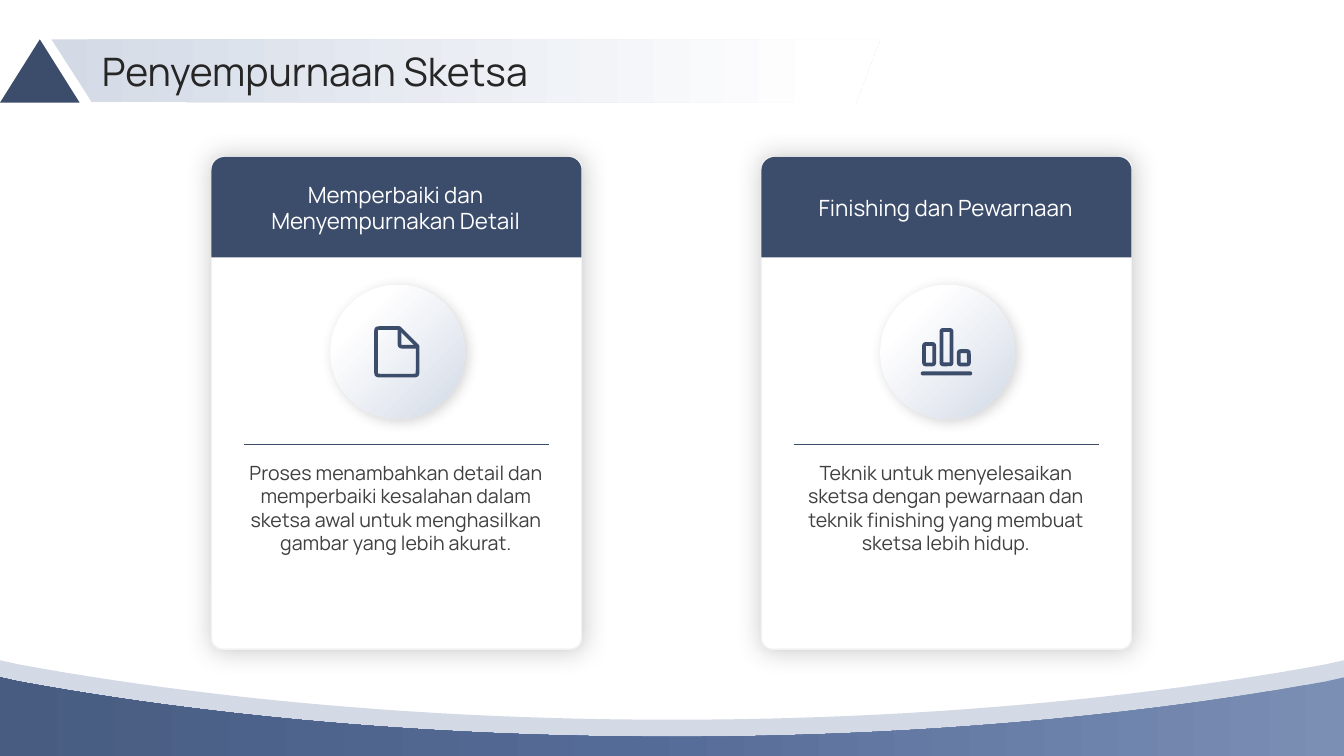
from dataclasses import dataclass

from lxml.etree import SubElement
from pptx import Presentation
from pptx.dml.color import RGBColor
from pptx.enum.shapes import MSO_CONNECTOR as Connector, MSO_SHAPE as Preset
from pptx.enum.text import MSO_ANCHOR as Anchor, PP_ALIGN as Align
from pptx.oxml.ns import qn
from pptx.util import Pt


@dataclass(frozen=True)
class Theme:
    font: str = "Manrope"
    navy: str = "3C4C6B"
    mist: str = "D3DAE6"
    white: str = "FFFFFF"
    edge: str = "F2F2F2"
    ink: str = "262626"
    gray: str = "404040"
    wave: tuple = ((0, "7B8FB5"), (53, "556B97"), (100, "485C81"))
    title: int = 28
    heading: int = 16
    body: int = 14


THEME = Theme()
WIDTH, HEIGHT = 960, 540


# Formatting
def paint(shape, fill=None, line=None, weight=1):
    """Fill with a colour, or leave open; outline only if a colour is given."""
    shape.shadow.inherit = False
    if fill:
        shape.fill.solid()
        shape.fill.fore_color.rgb = RGBColor.from_string(fill)
    else:
        shape.fill.background()
    if line:
        shape.line.color.rgb = RGBColor.from_string(line)
        shape.line.width = Pt(weight)
    else:
        shape.line.fill.background()
    return shape


def add_color(parent, color):
    return SubElement(parent, qn("a:srgbClr"), val=color)


def shade(shape, stops, angle):
    """Linear gradient; the angle runs clockwise."""
    shape.fill.gradient()
    shape.fill.gradient_angle = -angle % 360
    stop_list = shape._element.spPr.find(".//" + qn("a:gsLst"))
    for old in list(stop_list):
        stop_list.remove(old)
    for position, color in stops:
        add_color(SubElement(stop_list, qn("a:gs"), pos=str(position * 1000)), color)


def cast_shadow(shape, alpha, blur, distance, angle):
    effects = shape._element.spPr.find(qn("a:effectLst"))
    shadow = SubElement(effects, qn("a:outerShdw"), blurRad=str(Pt(blur)),
                        dist=str(Pt(distance)), dir=str(angle * 60000),
                        algn="ctr", rotWithShape="0")
    SubElement(add_color(shadow, THEME.gray), qn("a:alpha"), val=str(alpha * 1000))


# Elements
def add_preset(page, preset, left, top, width, height, adjust=None, **look):
    shape = page.shapes.add_shape(preset, Pt(left), Pt(top), Pt(width), Pt(height))
    if adjust is not None:
        shape.adjustments[0] = adjust
    return paint(shape, **look)


def bezier(start, control1, control2, end, steps=24):
    """Points along a cubic curve, both ends included."""
    def at(t):
        weights = ((1 - t) ** 3, 3 * t * (1 - t) ** 2, 3 * t * t * (1 - t), t ** 3)
        corners = (start, control1, control2, end)
        return tuple(sum(w * c[axis] for w, c in zip(weights, corners))
                     for axis in (0, 1))
    return [at(step / steps) for step in range(steps + 1)]


def bend(start, corner, end):
    return bezier(start, corner, corner, end, 8)


def add_outline(page, points, left=0, top=0, close=True, **look):
    first, *rest = [(Pt(left + x), Pt(top + y)) for x, y in points]
    builder = page.shapes.build_freeform(*first)
    builder.add_line_segments(rest, close=close)
    return paint(builder.convert_to_shape(), **look)


def add_text(page, text, left, top, width, height, size, color,
             align=Align.CENTER, anchor=Anchor.MIDDLE):
    box = page.shapes.add_textbox(Pt(left), Pt(top), Pt(width), Pt(height))
    frame = box.text_frame
    layout = dict(word_wrap=True, vertical_anchor=anchor, margin_left=0,
                  margin_right=0, margin_top=0, margin_bottom=0)
    for name, value in layout.items():
        setattr(frame, name, value)
    para = frame.paragraphs[0]
    para.alignment = align
    span = para.add_run()
    span.text = text
    for name, value in dict(name=THEME.font, size=Pt(size)).items():
        setattr(span.font, name, value)
    span.font.color.rgb = RGBColor.from_string(color)


def add_rule(page, left, top, width):
    rule = page.shapes.add_connector(Connector.STRAIGHT, Pt(left), Pt(top),
                                     Pt(left + width), Pt(top))
    rule.line.color.rgb = RGBColor.from_string(THEME.navy)
    rule.line.width = Pt(1)
    SubElement(rule._element.spPr, qn("a:effectLst"))


def add_wave(page, top):
    depth, height = 42.5, 56.16
    left_half = bezier((13, 2.9), (146, 27.4), (307, depth), (WIDTH / 2, depth))
    right_half = [(WIDTH - x, y) for x, y in reversed(left_half)]
    points = [(0, 0), *left_half, *right_half[1:], (WIDTH, 0),
              (WIDTH, height), (0, height)]
    return add_outline(page, points, top=top, fill=THEME.mist)


# Icons, drawn around a centre point
def draw_page_icon(page, x, y):
    stroke = dict(left=x, top=y, line=THEME.navy, weight=2.6)
    sheet = [(2, -17), (15, -4),
             *bend((15, 12.8), (15, 17), (10.8, 17)),
             *bend((-10.5, 17), (-14.7, 17), (-14.7, 12.8)),
             *bend((-14.7, -12.8), (-14.7, -17), (-10.5, -17))]
    fold = [(2, -17), *bend((2, -7.5), (2, -3.6), (6, -3.6)), (15, -3.6)]
    add_outline(page, sheet, **stroke)
    add_outline(page, fold, close=False, **stroke)


def draw_chart_icon(page, x, y):
    for index, top in enumerate((-5.6, -15.6, -0.5)):
        add_preset(page, Preset.ROUNDED_RECTANGLE, x - 16 + 12.4 * index, y + top,
                   7.2, 9 - top, 0.15, line=THEME.navy, weight=2.7)
    add_preset(page, Preset.ROUNDED_RECTANGLE, x - 18.4, y + 14, 36.8, 2.9, 0.5,
               fill=THEME.navy)


CARDS = (
    ("Memperbaiki dan Menyempurnakan Detail",
     "Proses menambahkan detail dan memperbaiki kesalahan dalam sketsa awal "
     "untuk menghasilkan gambar yang lebih akurat.", draw_page_icon),
    ("Finishing dan Pewarnaan",
     "Teknik untuk menyelesaikan sketsa dengan pewarnaan dan teknik finishing "
     "yang membuat sketsa lebih hidup.", draw_chart_icon),
)


def add_card(page, left, heading, body, draw_icon):
    top, width, disc_size = 112.1, 264.3, 96
    inner = left + 23
    center_x, center_y = left + 132.2, 251.3
    panel = add_preset(page, Preset.ROUNDED_RECTANGLE, left, top, width, 351.6, 0.03,
                       fill=THEME.white, line=THEME.edge)
    cast_shadow(panel, 29, 18, 0, 0)
    add_preset(page, Preset.ROUND_2_SAME_RECTANGLE, left, top, width, 71.8, 0.13,
               fill=THEME.navy)
    add_text(page, heading, left + 15.2, 118.2, 232.6, 60, THEME.heading, THEME.white)
    add_text(page, body, inner, 329, 217.6, 120, THEME.body, THEME.gray,
             anchor=Anchor.TOP)
    add_rule(page, inner, 317.3, 218)
    disc = add_preset(page, Preset.OVAL, center_x + 0.6 - disc_size / 2,
                      center_y - disc_size / 2, disc_size, disc_size)
    shade(disc, ((23, THEME.white), (100, THEME.mist)), 45)
    cast_shadow(disc, 22, 9, 3, 45)
    draw_icon(page, center_x, center_y)


def add_title(page, text):
    top = 28.1
    add_preset(page, Preset.ISOSCELES_TRIANGLE, 0, top, 56.9, 45.2, fill=THEME.navy)
    band = add_outline(page, [(65.5, 72.8), (36.7, top), (628.6, top), (611.5, 73.3)])
    shade(band, ((0, THEME.mist), (94, THEME.white)), 0)
    add_text(page, text, 72.7, 32.4, 829.4, 36.7, THEME.title, THEME.ink,
             align=Align.LEFT)


def main():
    deck = Presentation()
    deck.slide_width, deck.slide_height = Pt(WIDTH), Pt(HEIGHT)
    page = deck.slides.add_slide(deck.slide_layouts[6])

    # Waves along the foot
    add_wave(page, 471.6)
    shade(add_wave(page, 483.84), THEME.wave, 180)

    # Cards, evenly spaced
    for index, card in enumerate(CARDS):
        add_card(page, 151.1 + 392.8 * index, *card)

    # Title band
    add_title(page, "Penyempurnaan Sketsa")
    deck.save("out.pptx")


if __name__ == "__main__":
    main()
